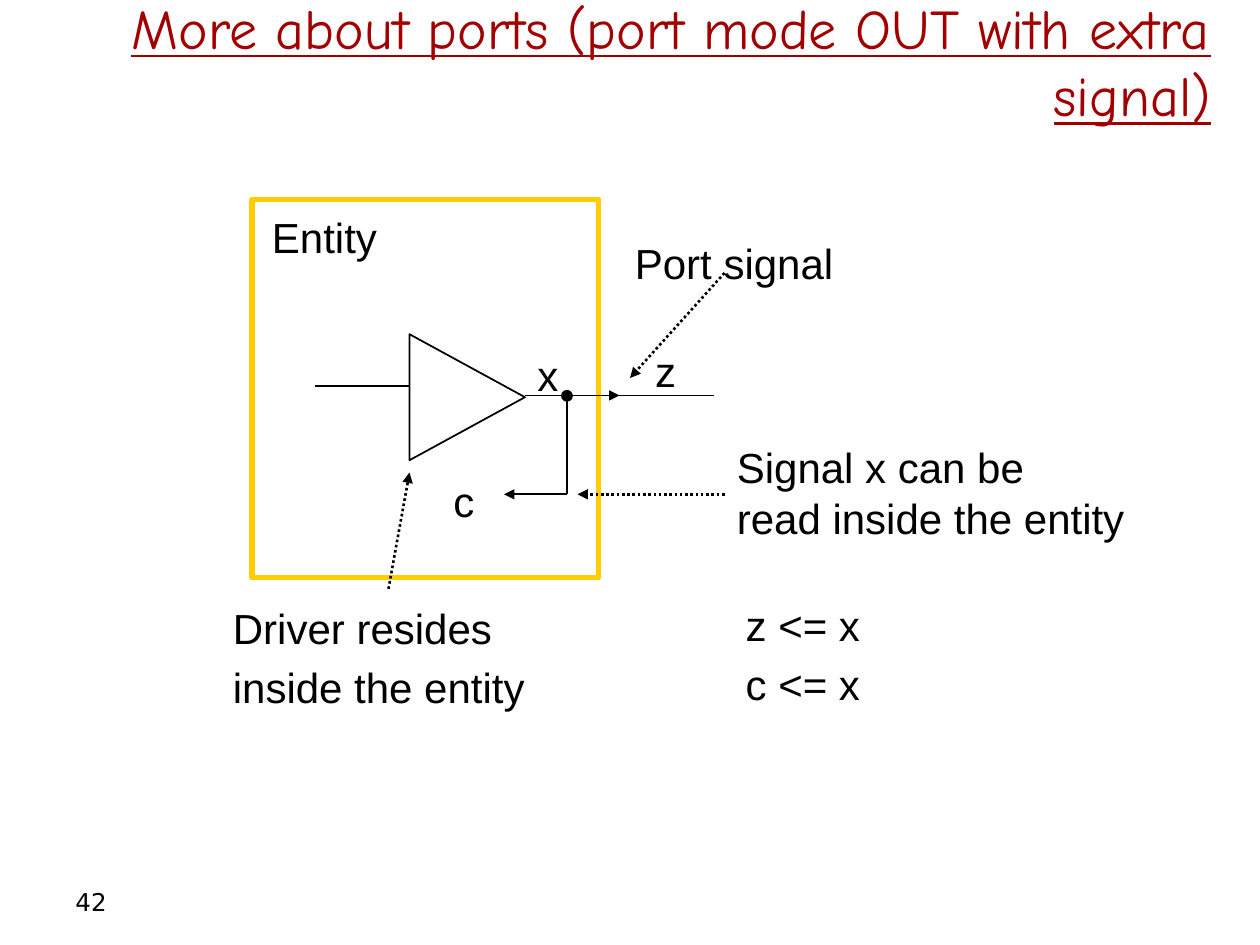
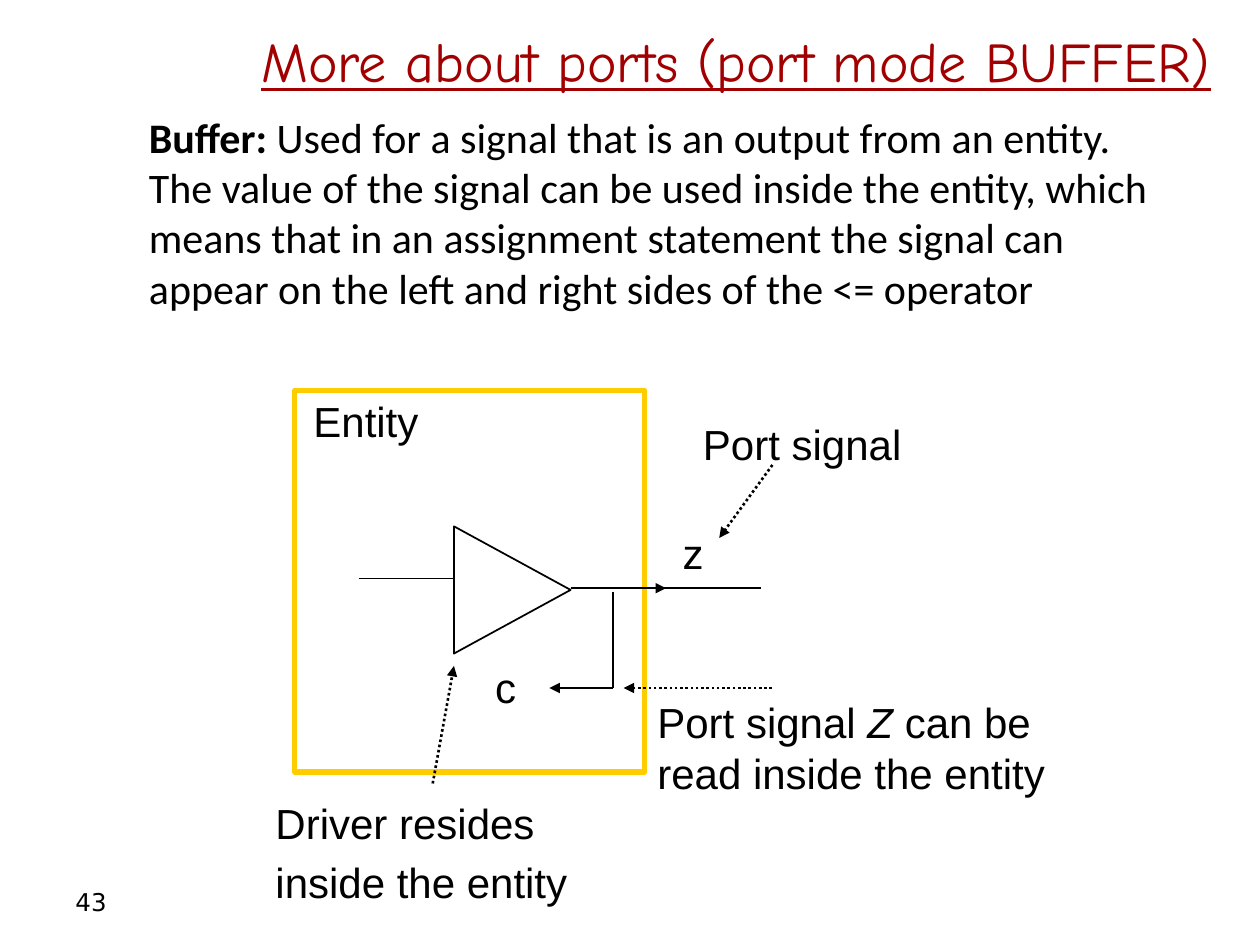
from lxml.etree import SubElement
from pptx import Presentation
from pptx.dml.color import RGBColor
from pptx.enum.dml import MSO_LINE
from pptx.enum.shapes import MSO_CONNECTOR, MSO_SHAPE
from pptx.enum.text import MSO_ANCHOR, PP_ALIGN
from pptx.oxml.ns import qn
from pptx.util import Pt

# Shared look
BLACK = RGBColor(0x00, 0x00, 0x00)
TITLE_RED = RGBColor(0xA2, 0x00, 0x00)
ENTITY_YELLOW = RGBColor(0xFF, 0xCC, 0x00)
LABEL_FONT = "Arial"
BODY_FONT = "Calibri"
TITLE_FONT = "Comic Neue"
NUMBER_FONT = "DejaVu Sans"
LABEL_SIZE = 24
LABEL_GAP = 4.8


def add_text(slide, box, paragraphs, font=LABEL_FONT, size=LABEL_SIZE, color=BLACK,
             gap=0, align=PP_ALIGN.LEFT, anchor=MSO_ANCHOR.TOP):
    """Each paragraph is a list of (text, style) runs; style names font flags."""
    frame = slide.shapes.add_textbox(*map(Pt, box)).text_frame
    frame.word_wrap = True
    frame.vertical_anchor = anchor
    for index, runs in enumerate(paragraphs):
        paragraph = frame.add_paragraph() if index else frame.paragraphs[0]
        paragraph.alignment = align
        paragraph.space_before = Pt(gap if index else 0)
        for text, style in runs:
            run = paragraph.add_run()
            run.text = text
            run.font.name = font
            run.font.size = Pt(size)
            run.font.color.rgb = color
            if style:
                setattr(run.font, style, True)


def add_label(slide, left, top, *lines, width=40, gap=LABEL_GAP):
    height = 36 + 34 * (len(lines) - 1)
    add_text(slide, (left, top, width, height), [[(line, None)] for line in lines], gap=gap)


def add_outline(slide, kind, box, color=BLACK, width=1.0, fill=None):
    shape = slide.shapes.add_shape(kind, *map(Pt, box))
    shape.shadow.inherit = False
    if fill is None:
        shape.fill.background()
    else:
        shape.fill.solid()
        shape.fill.fore_color.rgb = fill
    shape.line.color.rgb = color
    shape.line.width = Pt(width)
    return shape


def add_wire(slide, start, end, arrow=False, dotted=False):
    wire = slide.shapes.add_connector(MSO_CONNECTOR.STRAIGHT, *map(Pt, (*start, *end)))
    wire.line.color.rgb = BLACK
    wire.line.width = Pt(1.5 if dotted else 1)
    if dotted:
        wire.line.dash_style = MSO_LINE.ROUND_DOT
    if arrow:
        SubElement(wire.line._get_or_add_ln(), qn("a:tailEnd"), type="triangle")
    SubElement(wire._element.spPr, qn("a:effectLst"))


def add_pointer(slide, start, end):
    add_wire(slide, start, end, arrow=True, dotted=True)


def add_title_and_number(slide, title, number):
    add_text(slide, (24, 9.5, 675, 50), [[(title, "underline")]], TITLE_FONT, 32,
             TITLE_RED, align=PP_ALIGN.RIGHT, anchor=MSO_ANCHOR.MIDDLE)
    add_text(slide, (36, 500.5, 168, 29), [[(str(number), None)]], NUMBER_FONT, 14,
             anchor=MSO_ANCHOR.MIDDLE)


def add_entity_diagram(slide, left, top, scale=1.0):
    """Entity frame with its driver, output port and feedback branch."""
    def at(x, y):
        return left + x * scale, top + y * scale

    def box(x, y, width, height):
        return (*at(x, y), width * scale, height * scale)

    add_outline(slide, MSO_SHAPE.RECTANGLE, box(0, 0, 198, 216), ENTITY_YELLOW, 3)

    # Driver between input and output
    add_wire(slide, at(36, 106.5), at(90, 106.5))
    driver = add_outline(slide, MSO_SHAPE.FLOWCHART_EXTRACT, box(87, 80, 72, 66))
    driver.rotation = 90
    add_wire(slide, at(156, 112), at(210, 112), arrow=True)
    add_wire(slide, at(204, 112), at(264, 112))

    # Feedback branch
    add_wire(slide, at(180, 114), at(180, 168.5))
    add_wire(slide, at(180, 168.5), at(144, 168.5), arrow=True)

    # Explanations
    add_pointer(slide, at(78, 222.5), at(90, 156))
    add_pointer(slide, at(270, 168.5), at(186, 168.5))
    add_label(slide, *at(-18, 227), "Driver resides", "inside the entity", width=195)


def add_port_signal(slide, label_at, pointer_start, pointer_end):
    add_label(slide, *label_at, "Port signal", width=140)
    add_pointer(slide, pointer_start, pointer_end)


def build_extra_signal_slide(slide):
    add_title_and_number(slide, "More about ports (port mode OUT with extra signal)", 42)
    add_entity_diagram(slide, 144, 114)
    add_outline(slide, MSO_SHAPE.OVAL, (321, 223.2, 6, 6), width=0.75, fill=BLACK)
    add_port_signal(slide, (355.7, 132), (414, 156), (360, 216))
    add_label(slide, 148.3, 117.4, "Entity", width=90)
    add_label(slide, 300, 196, "x")
    add_label(slide, 252, 268, "c")
    add_label(slide, 367.2, 193.7, "z")
    add_label(slide, 414, 249, "Signal x can be", "read inside the entity", width=258, gap=0)
    add_label(slide, 419, 339, "z <= x", "c <= x", width=90)


def build_buffer_slide(slide):
    add_title_and_number(slide, "More about ports (port mode BUFFER)", 43)
    add_text(slide, (78, 60, 588, 124), [[
        ("Buffer:", "bold"),
        (" Used for a signal that is an output from an entity. The value of the signal "
         "can be used inside the entity, which means that in an assignment statement "
         "the signal can appear on the left and right sides of the <= operator", None),
    ]], BODY_FONT)
    add_entity_diagram(slide, 168.5, 223, scale=1.01)
    add_port_signal(slide, (394.6, 235.4), (441.4, 265.7), (411, 307.4))
    add_label(slide, 172, 222.5, "Entity", width=90)
    add_label(slide, 275.8, 374.4, "c")
    add_label(slide, 383, 298, "z")
    add_text(slide, (368.6, 394.6, 261, 65), [
        [("Port signal ", None), ("Z", "italic"), (" can be", None)],
        [("read inside the entity", None)],
    ])


def main():
    presentation = Presentation()
    presentation.slide_width = Pt(720)
    presentation.slide_height = Pt(540)
    blank = presentation.slide_layouts[6]
    for build in (build_extra_signal_slide, build_buffer_slide):
        build(presentation.slides.add_slide(blank))
    presentation.save("out.pptx")


if __name__ == "__main__":
    main()
